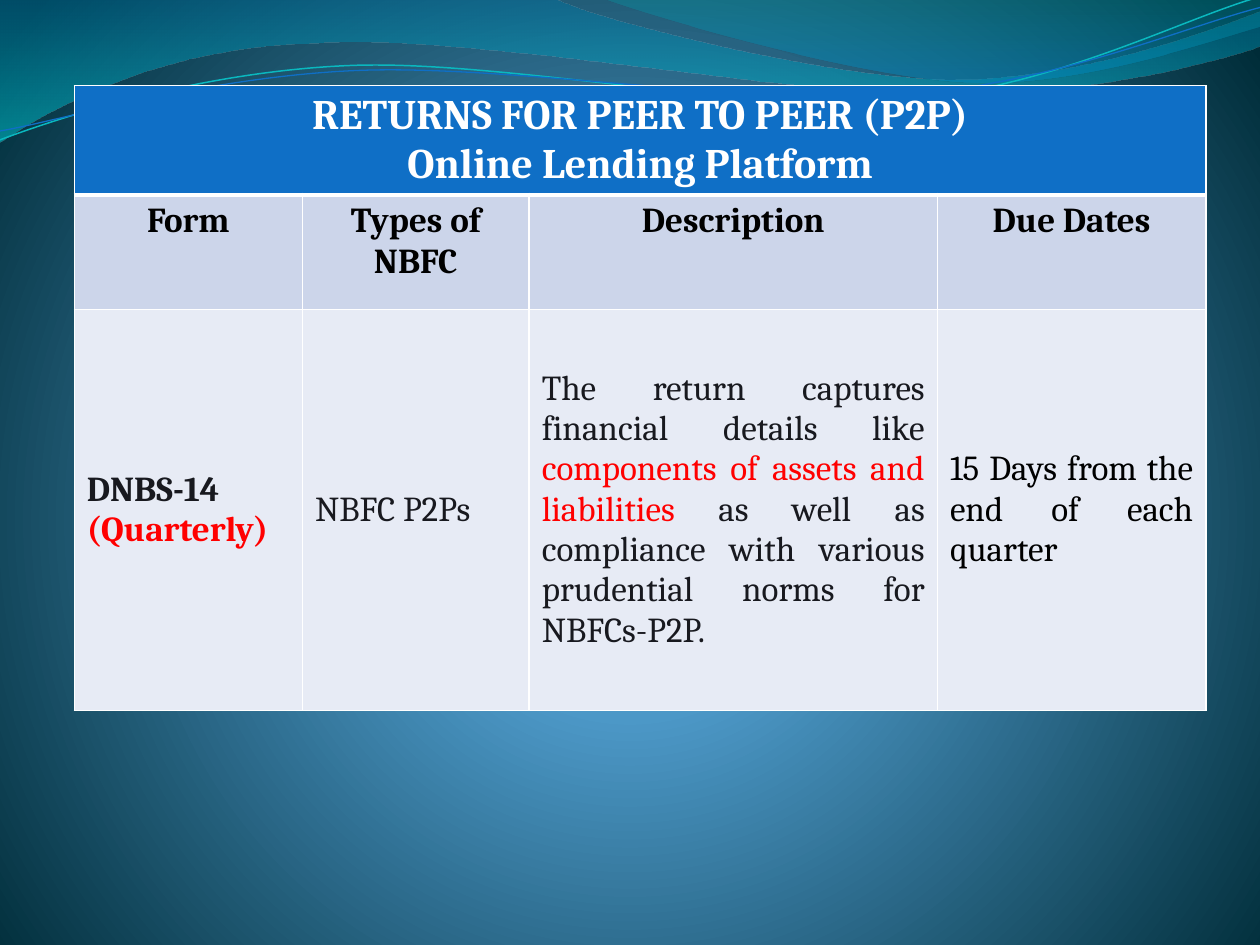
from math import cos, radians, sin

from lxml.etree import SubElement
from pptx import Presentation
from pptx.dml.color import RGBColor
from pptx.enum.text import MSO_ANCHOR as Anchor, PP_ALIGN as Align
from pptx.oxml import parse_xml
from pptx.oxml.ns import nsdecls, qn
from pptx.util import Inches, Pt

FONT = "Cambria"
WHITE = RGBColor(0xFF, 0xFF, 0xFF)
BLACK = RGBColor(0x00, 0x00, 0x00)
INK = RGBColor(0x18, 0x19, 0x1F)
RED = RGBColor(0xFF, 0x00, 0x00)
BLUE = RGBColor(0x0F, 0x6F, 0xC6)
TEAL = RGBColor(0x0A, 0xB8, 0xBF)
HEADING_FILL = RGBColor(0xCC, 0xD5, 0xEA)
BODY_FILL = RGBColor(0xE7, 0xEB, 0xF5)
SKY = RGBColor(0x4A, 0xA0, 0xD6)
MID_BLUE = RGBColor(0x4C, 0x98, 0xC7)
DEEP = RGBColor(0x00, 0x2C, 0x38)
WAVE_BLUE = RGBColor(0x00, 0x74, 0xA1)
WAVE_TEAL = RGBColor(0x00, 0xC6, 0xCF)
CREST_TEAL = RGBColor(0x00, 0xA1, 0xA9)
CREST_BLUE = RGBColor(0x00, 0x8B, 0xBF)

LINEAR_DOWN = '<a:lin ang="5400000" scaled="1"/>'
CIRCLE = ('<a:path path="circle"><a:fillToRect l="10000" t="110000" '
          'r="10000" b="100000"/></a:path>')
TILT = -2.7

# Each step lists one point for a straight line or three for a cubic curve.
WAVE = [[(0, 0)], [(4.4, -0.01)],
        [(4.76, 0.17), (6.64, 0.63), (7.58, 0.63)],
        [(8.53, 0.63), (9.58, 0.26), (10, 0.09)], [(10.01, 0.36)],
        [(9.83, 0.44), (8.7, 0.76), (7.46, 0.75)],
        [(6.22, 0.75), (3.82, 0.28), (2.57, 0.34)],
        [(1.29, 0.36), (0.46, 0.83), (-0.01, 1.13)], [(0, 0)]]
CREST = [[(4.79, -0.01)], [(5.09, 0.11), (6.82, 0.62), (7.69, 0.65)],
         [(8.56, 0.69), (9.61, 0.32), (10, 0.21)], [(10, 0)],
         [(4.79, -0.01)]]
TEAL_LINE = [[(0, 1.11)], [(0.48, 0.93), (1.58, 0.57), (2.77, 0.52)],
             [(3.95, 0.47), (5.93, 0.89), (7.13, 0.8)],
             [(8.33, 0.71), (9.38, 0.15), (9.98, -0.02)]]
BLUE_LINE = [[(0, 1.04)], [(0.47, 0.96), (1.64, 0.61), (2.83, 0.56)],
             [(4.03, 0.51), (5.97, 0.84), (7.17, 0.75)],
             [(8.36, 0.67), (9.41, 0.21), (10, 0.06)]]

TITLE = [[("RETURNS FOR PEER TO PEER (P2P)", WHITE)],
         [("Online Lending Platform", WHITE)]]
HEADINGS = ["Form", "Types of NBFC", "Description", "Due Dates"]
RETURN_ROW = [
    [[("DNBS-14", INK)], [("(Quarterly) ", RED)]],
    [[("NBFC P2Ps", INK)]],
    [[("The return captures financial details like ", INK),
      ("components of assets and liabilities ", RED),
      ("as well as compliance with various prudential norms for NBFCs-P2P.",
       INK)]],
    [[("15 Days from the end of each quarter", BLACK)]],
]


def gradient(stops, direction):
    """Return a gradFill; each stop is (position %, colour, opacity %)."""
    marks = "".join(
        f'<a:gs pos="{position * 1000}"><a:srgbClr val="{color}">'
        f'<a:alpha val="{opacity * 1000}"/></a:srgbClr></a:gs>'
        for position, color, opacity in stops)
    return parse_xml(f'<a:gradFill {nsdecls("a")} rotWithShape="1">'
                     f'<a:gsLst>{marks}</a:gsLst>{direction}</a:gradFill>')


def replace_fill(parent, fill):
    parent.replace(parent.find(qn("a:solidFill")), fill)


def turn(steps, center, degrees):
    angle = radians(degrees)
    middle_x, middle_y = center
    return [[(middle_x + (x - middle_x) * cos(angle)
              - (y - middle_y) * sin(angle),
              middle_y + (x - middle_x) * sin(angle)
              + (y - middle_y) * cos(angle)) for x, y in step]
            for step in steps]


def add_outline(page, left, top, steps, closed):
    """Lay all points as straight segments, then join triples into curves."""
    points = [(left + Inches(x), top + Inches(y))
              for step in steps for x, y in step]
    builder = page.shapes.build_freeform(*points[0])
    builder.add_line_segments(points[1:], close=closed)
    shape = builder.convert_to_shape()
    shape.shadow.inherit = False
    segments = iter(shape.element.findall(".//" + qn("a:lnTo")))
    for step in steps[1:]:
        parts = [next(segments) for _ in step]
        if len(parts) == 3:
            parts[0].tag = qn("a:cubicBezTo")
            for part in parts[1:]:
                parts[0].append(part[0])
                part.getparent().remove(part)
    return shape


def add_band(page, left, top, steps, stops):
    band = add_outline(page, left, top, steps, True)
    band.line.fill.background()
    band.fill.solid()
    replace_fill(band.element.spPr, gradient(stops, LINEAR_DOWN))


def add_strand(page, left, top, steps, center, color, width):
    strand = add_outline(page, left, top, turn(steps, center, -TILT), False)
    strand.rotation = TILT
    strand.fill.background()
    strand.line.color.rgb = color
    strand.line.width = Pt(width)


def add_backdrop(page, left, top):
    page.background.fill.solid()
    replace_fill(page.element.find(".//" + qn("p:bgPr")),
                 gradient([(0, SKY, 100), (25, MID_BLUE, 100),
                           (100, DEEP, 100)], CIRCLE))
    add_band(page, left, top, WAVE,
             [(0, WAVE_BLUE, 45), (100, WAVE_TEAL, 55)])
    add_band(page, left, top, CREST,
             [(0, CREST_TEAL, 30), (80, CREST_BLUE, 45)])
    add_strand(page, left, top, TEAL_LINE, (4.99, 0.58), TEAL, 0.85)
    add_strand(page, left, top, BLUE_LINE, (5, 0.59), BLUE, 0.75)


def set_borders(cell, top=1, bottom=1):
    properties = cell._tc.get_or_add_tcPr()
    widths = {"lnL": 1, "lnR": 1, "lnT": top, "lnB": bottom}
    for index, (side, width) in enumerate(widths.items()):
        line = SubElement(properties, qn("a:" + side), w=str(Pt(width)))
        fill = SubElement(line, qn("a:solidFill"))
        SubElement(fill, qn("a:srgbClr"), val=str(WHITE))
        properties.insert(index, line)


def fill_cell(cell, paragraphs, fill, size=20, bold=True,
              align=Align.CENTER, anchor=Anchor.TOP):
    cell.fill.solid()
    cell.fill.fore_color.rgb = fill
    cell.vertical_anchor = anchor
    frame = cell.text_frame
    for index, spans in enumerate(paragraphs):
        para = frame.add_paragraph() if index else frame.paragraphs[0]
        para.alignment = align
        for text, color in spans:
            span = para.add_run()
            span.text = text
            span.font.name = FONT
            span.font.size = Pt(size)
            span.font.bold = bold
            span.font.color.rgb = color


def add_returns_table(page, left, top, width, height):
    holder = page.shapes.add_table(3, 4, left, top, width, height)
    table = holder.table
    for column, size in zip(table.columns, (1.81, 1.8, 3.24, 2.13)):
        column.width = Inches(size)
    for row, size in zip(table.rows, (0.8, 0.91, 3.18)):
        row.height = Inches(size)
    holder.height = height

    table.cell(0, 0).merge(table.cell(0, 3))
    fill_cell(table.cell(0, 0), TITLE, BLUE, size=24)
    for index, (heading, body) in enumerate(zip(HEADINGS, RETURN_ROW)):
        fill_cell(table.cell(1, index), [[(heading, BLACK)]], HEADING_FILL)
        fill_cell(table.cell(2, index), body, BODY_FILL, bold=index == 0,
                  align=Align.JUSTIFY, anchor=Anchor.MIDDLE)
        set_borders(table.cell(0, index), bottom=3)
        set_borders(table.cell(1, index), top=3)
        set_borders(table.cell(2, index))


def main():
    deck = Presentation()
    deck.slide_width, deck.slide_height = Inches(10), Inches(7.5)
    page = deck.slides.add_slide(deck.slide_layouts[6])
    add_backdrop(page, Inches(0), Inches(0))
    add_returns_table(page, Inches(0.59), Inches(0.68),
                      Inches(8.98), Inches(4.99))
    deck.save("out.pptx")


if __name__ == "__main__":
    main()
